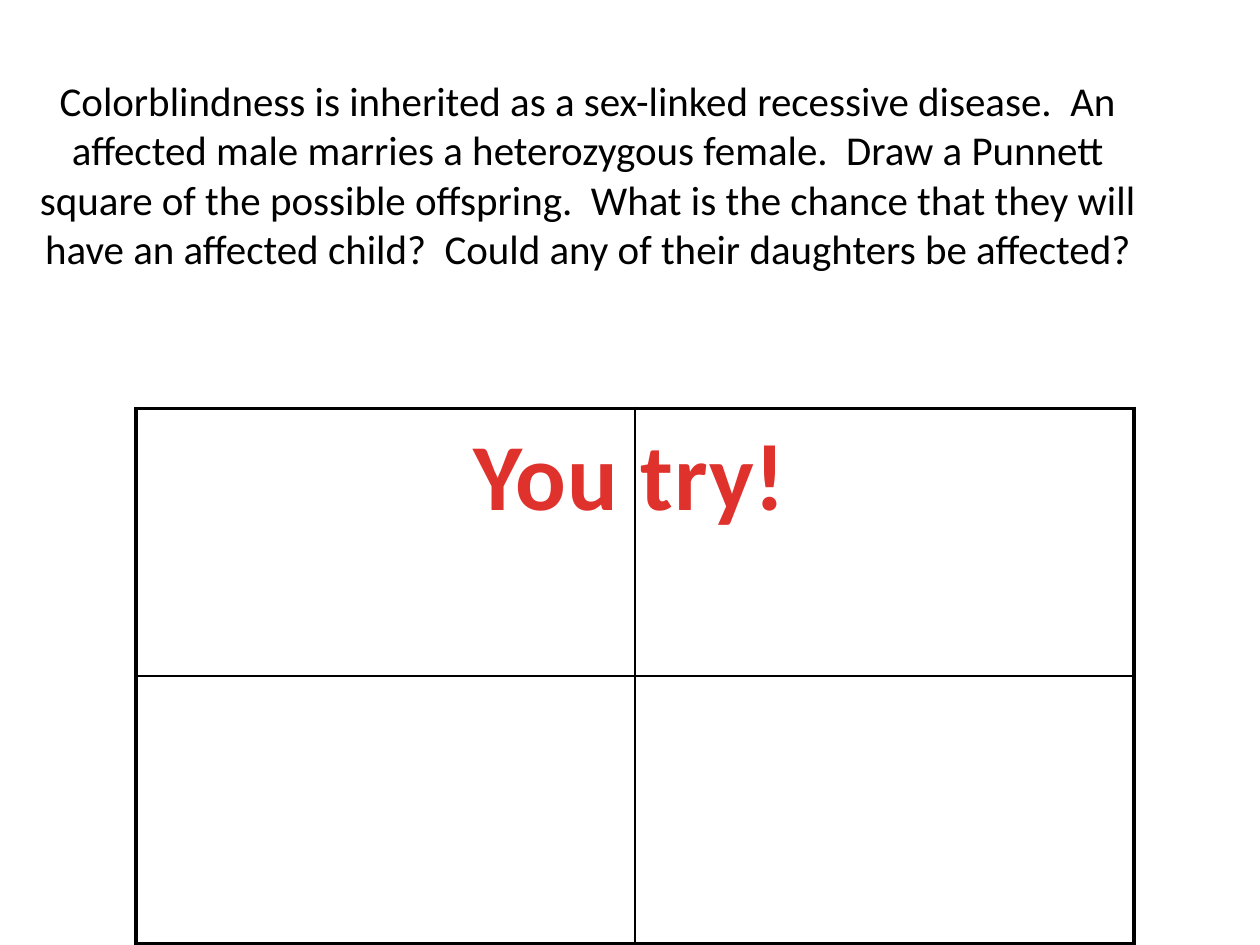
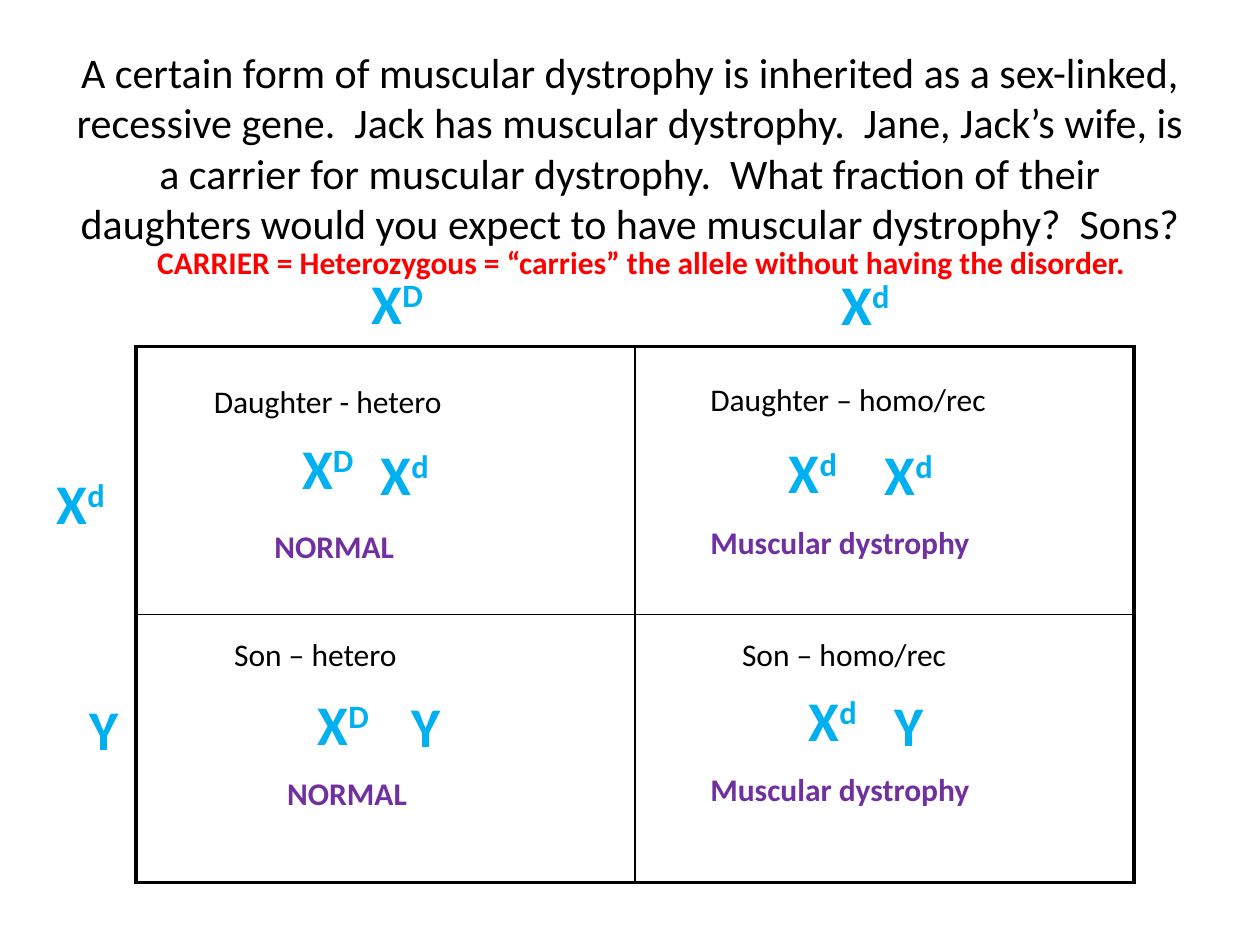
from itertools import product

from lxml.etree import SubElement
from pptx import Presentation
from pptx.dml.color import RGBColor
from pptx.enum.text import MSO_ANCHOR as Anchor, PP_ALIGN as Align
from pptx.oxml.ns import qn
from pptx.util import Cm, Pt

BLACK, RED, BRIGHT_RED = "000000", "FF0000", "E0322D"
BLUE, PURPLE = "00B0F0", "7030A0"
GENE = {"size": Pt(32), "bold": True, "color": BLUE}
ROLE = {"size": Pt(18)}
OUTCOME = {"size": Pt(18), "bold": True, "color": PURPLE}
WARNING = {"size": Pt(18), "bold": True, "color": RED}
SHOUT = {"size": Pt(54), "bold": True, "color": BRIGHT_RED}

COLORBLIND_QUESTION = (
    "Colorblindness is inherited as a sex-linked recessive disease.  "
    "An affected male marries a heterozygous female.  "
    "Draw a Punnett square of the possible offspring.  "
    "What is the chance that they will have an affected child?  "
    "Could any of their daughters be affected?")
DYSTROPHY_QUESTION = (
    "A certain form of muscular dystrophy is inherited as a sex-linked, recessive gene.  "
    "Jack has muscular dystrophy.  Jane, Jack’s wife, is a carrier for muscular dystrophy.  "
    "What fraction of their daughters would you expect to have muscular dystrophy?  Sons?")

PARENT_GENES = [("X", "D", 7.24, 5.28), ("X", "d", 16.71, 5.31),
                ("X", "d", 0.89, 9.32), ("Y", "", 1.55, 13.87)]
CHILD_GENES = [("X", "D", 5.84, 8.61), ("X", "d", 7.42, 8.74),
               ("X", "d", 15.65, 8.69), ("X", "d", 17.58, 8.74),
               ("X", "D", 6.15, 13.77), ("Y", "", 8.05, 13.82),
               ("X", "d", 16.05, 13.69), ("Y", "", 17.78, 13.79)]
ROLES = [("Daughter - hetero", 4.06, 7.57), ("Daughter – homo/rec", 14.07, 7.54),
         ("Son – hetero", 4.47, 12.67), ("Son – homo/rec", 14.71, 12.67)]
OUTCOMES = [("NORMAL", 5.28, 10.49), ("Muscular dystrophy", 14.07, 10.41),
            ("NORMAL", 5.54, 15.47), ("Muscular dystrophy", 14.07, 15.39)]


def rgb(value):
    return RGBColor.from_string(value)


class Deck:
    font_name = "Calibri"
    outer_line, inner_line = Pt(2.25), Pt(1)

    def __init__(self):
        self.presentation = Presentation()
        self.presentation.slide_width = Cm(25.4)
        self.presentation.slide_height = Cm(19.05)
        self.slide = None

    def add_slide(self):
        self.slide = self.presentation.slides.add_slide(self.presentation.slide_layouts[6])

    def add_run(self, paragraph, text, style, **attributes):
        run = paragraph.add_run()
        run.text = text
        values = {"name": self.font_name, **style}
        run.font.color.rgb = rgb(values.pop("color", BLACK))
        for name, value in values.items():
            setattr(run.font, name, value)
        for name, value in attributes.items():
            run.font._element.set(name, value)

    def text(self, text, box, style, align=Align.LEFT, anchor=Anchor.TOP, wrap=True, **attributes):
        shape = self.slide.shapes.add_textbox(*map(Cm, box))
        frame = shape.text_frame
        for name, value in {"word_wrap": wrap, "vertical_anchor": anchor}.items():
            setattr(frame, name, value)
        paragraph = frame.paragraphs[0]
        paragraph.alignment = align
        self.add_run(paragraph, text, style, **attributes)
        return paragraph

    def question(self, text, box, size):
        self.text(text, box, {"size": Pt(size)}, Align.CENTER, Anchor.MIDDLE)

    def gene(self, letter, allele, left, top):
        paragraph = self.text(letter, (left, top, 2.13, 1.63), GENE)
        if allele:
            self.add_run(paragraph, allele, GENE, baseline="30000")

    def label(self, text, left, top, style, width=6.99):
        self.text(text, (left, top, width, 1.02), style)

    def border(self, cell, side, width):
        line = SubElement(cell._tc.get_or_add_tcPr(), qn(f"a:ln{side}"), w=str(width))
        fill = SubElement(line, qn("a:solidFill"))
        SubElement(fill, qn("a:srgbClr"), val=BLACK)

    def punnett_square(self, top):
        frame = self.slide.shapes.add_table(2, 2, Cm(2.74), Cm(top), Cm(20.12), Cm(10.8))
        table = frame.table
        table.first_row = table.horz_banding = False
        for row, column in product(range(2), repeat=2):
            cell = table.cell(row, column)
            outer_sides = {"L": column == 0, "R": column == 1, "T": row == 0, "B": row == 1}
            for side, outer in outer_sides.items():
                self.border(cell, side, self.outer_line if outer else self.inner_line)
            cell.fill.background()


def main():
    deck = Deck()

    deck.add_slide()
    deck.question(COLORBLIND_QUESTION, (0, 1.07, 23.7, 4.88), 23.4)
    deck.punnett_square(8.23)
    deck.text("You try!", (8.81, 8.26, 7.77, 2.57), SHOUT, Align.CENTER, wrap=False, spc="50")

    deck.add_slide()
    deck.question(DYSTROPHY_QUESTION, (1.27, 0.64, 22.86, 4.65), 24)
    deck.punnett_square(6.99)
    deck.label("CARRIER = Heterozygous = “carries” the allele without having the disorder.",
               2.92, 4.78, WARNING, width=20.96)
    for gene in PARENT_GENES + CHILD_GENES:
        deck.gene(*gene)
    for labels, style in ((ROLES, ROLE), (OUTCOMES, OUTCOME)):
        for label in labels:
            deck.label(*label, style)

    deck.presentation.save("out.pptx")


if __name__ == "__main__":
    main()
